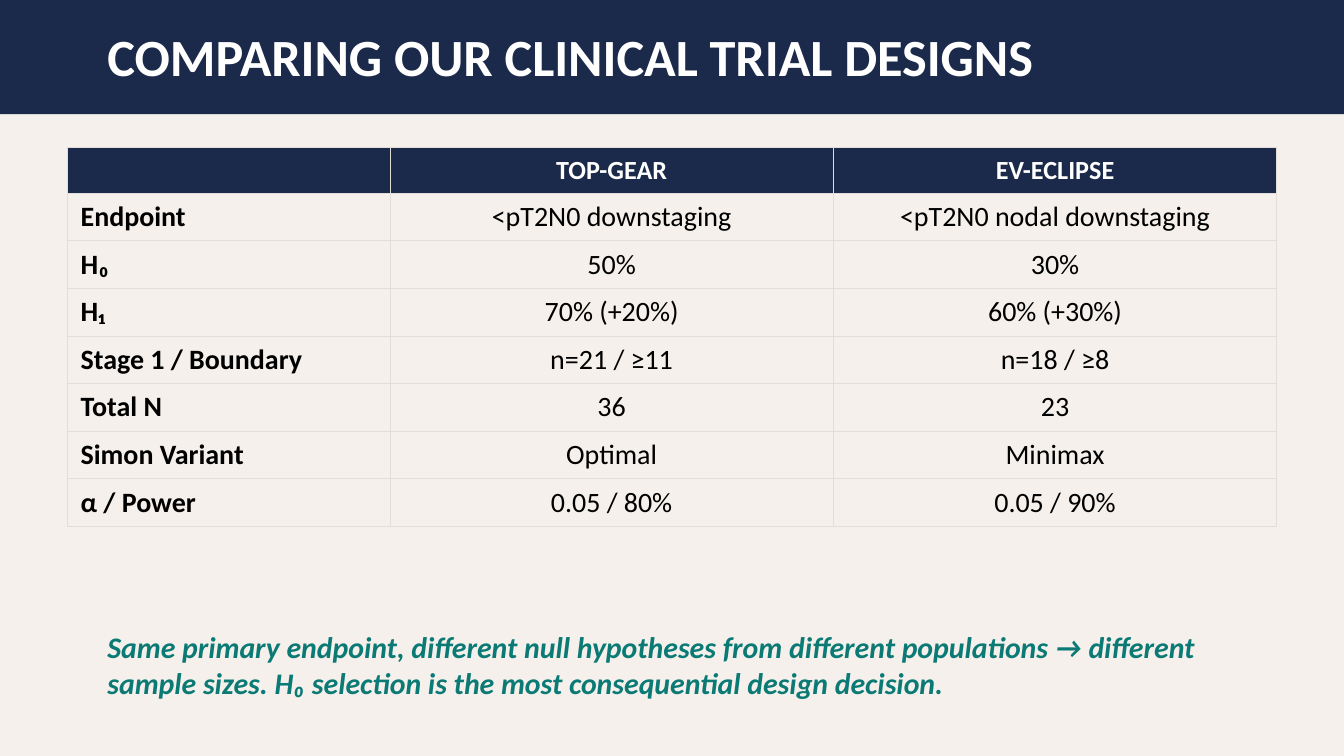
from dataclasses import dataclass

import pptx
import pptx.dml.color
import pptx.enum.shapes
import pptx.enum.text
import pptx.oxml
import pptx.oxml.ns
import pptx.util
from pptx.dml.color import RGBColor
from pptx.util import Cm

NAVY = RGBColor(0x1B, 0x2A, 0x4A)
CREAM = RGBColor(0xF5, 0xF0, 0xEB)
TEAL = RGBColor(0x0B, 0x7A, 0x75)
WHITE = RGBColor(0xFF, 0xFF, 0xFF)
BLACK = RGBColor(0x00, 0x00, 0x00)
BORDER = RGBColor(0xE2, 0xDD, 0xD7)
FONT = "Calibri"
BORDER_WIDTH = pptx.util.Pt(0.5)


@dataclass(frozen=True)
class TextStyle:
    size: int
    color: RGBColor
    bold: bool = True
    italic: bool = False
    centered: bool = False


@dataclass(frozen=True)
class TextBlock:
    text: str
    top: Cm
    height: Cm
    style: TextStyle


TITLE = TextBlock("COMPARING OUR CLINICAL TRIAL DESIGNS", Cm(0.3), Cm(1.52),
                  TextStyle(28, WHITE))
TAKEAWAY = TextBlock(
    "Same primary endpoint, different null hypotheses from different populations "
    "→ different sample sizes. H₀ selection is the most consequential design decision.",
    Cm(11.68), Cm(1.78), TextStyle(16, TEAL, italic=True))

HEADER_STYLE = TextStyle(14, WHITE, centered=True)
LABEL_STYLE = TextStyle(15, BLACK)
VALUE_STYLE = TextStyle(15, BLACK, bold=False, centered=True)

COLUMN_WIDTHS = (Cm(6.1), Cm(8.38), Cm(8.38))
HEADER_HEIGHT, ROW_HEIGHT = Cm(0.86), Cm(0.9)
TRIAL_ROWS = (
    ("", "TOP-GEAR", "EV-ECLIPSE"),
    ("Endpoint", "<pT2N0 downstaging", "<pT2N0 nodal downstaging"),
    ("H₀", "50%", "30%"),
    ("H₁", "70% (+20%)", "60% (+30%)"),
    ("Stage 1 / Boundary", "n=21 / ≥11", "n=18 / ≥8"),
    ("Total N", "36", "23"),
    ("Simon Variant", "Optimal", "Minimax"),
    ("α / Power", "0.05 / 80%", "0.05 / 90%"),
)


def write_text(text_frame, text: str, style: TextStyle) -> None:
    paragraph = text_frame.paragraphs[0]
    if text:
        paragraph.text = text
    paragraph.alignment = (pptx.enum.text.PP_ALIGN.CENTER if style.centered
                           else pptx.enum.text.PP_ALIGN.LEFT)
    font = paragraph.font
    font.name = FONT
    font.size = pptx.util.Pt(style.size)
    font.bold = style.bold
    font.italic = style.italic
    font.color.rgb = style.color


def add_text_block(slide, block: TextBlock) -> None:
    shape = slide.shapes.add_textbox(Cm(1.78), block.top, Cm(21.84), block.height)
    shape.text_frame.word_wrap = True
    shape.text_frame.vertical_anchor = pptx.enum.text.MSO_ANCHOR.MIDDLE
    write_text(shape.text_frame, block.text, block.style)


def add_borders(cell) -> None:
    properties = cell._tc.get_or_add_tcPr()
    for side in ("lnL", "lnR", "lnT", "lnB"):
        properties.append(pptx.oxml.parse_xml(
            f'<a:{side} {pptx.oxml.ns.nsdecls("a")} w="{BORDER_WIDTH}">'
            f'<a:solidFill><a:srgbClr val="{BORDER}"/></a:solidFill></a:{side}>'))


def add_trial_table(slide) -> None:
    row_heights = [HEADER_HEIGHT] + [ROW_HEIGHT] * (len(TRIAL_ROWS) - 1)
    table = slide.shapes.add_table(
        len(TRIAL_ROWS), len(COLUMN_WIDTHS), Cm(1.27), Cm(2.79),
        sum(COLUMN_WIDTHS), sum(row_heights)).table
    table.first_row = False
    table.horz_banding = False
    for column, width in zip(table.columns, COLUMN_WIDTHS):
        column.width = width
    for row_index, (values, height) in enumerate(zip(TRIAL_ROWS, row_heights)):
        table.rows[row_index].height = height
        for column_index, text in enumerate(values):
            cell = table.cell(row_index, column_index)
            add_borders(cell)
            if row_index == 0:
                cell.fill.solid()
                cell.fill.fore_color.rgb = NAVY
                style = HEADER_STYLE
            else:
                cell.fill.background()
                style = VALUE_STYLE if column_index else LABEL_STYLE
            write_text(cell.text_frame, text, style)


def main() -> None:
    presentation = pptx.Presentation()
    presentation.slide_width = Cm(25.4)
    presentation.slide_height = Cm(14.29)
    slide = presentation.slides.add_slide(presentation.slide_layouts[6])
    slide.background.fill.solid()
    slide.background.fill.fore_color.rgb = CREAM

    # Title band
    band = slide.shapes.add_shape(pptx.enum.shapes.MSO_SHAPE.RECTANGLE,
                                  0, 0, presentation.slide_width, Cm(2.16))
    band.shadow.inherit = False
    band.fill.solid()
    band.fill.fore_color.rgb = NAVY
    band.line.fill.background()
    add_text_block(slide, TITLE)

    # Trial comparison
    add_trial_table(slide)

    # Takeaway
    add_text_block(slide, TAKEAWAY)

    presentation.save("out.pptx")


if __name__ == "__main__":
    main()
